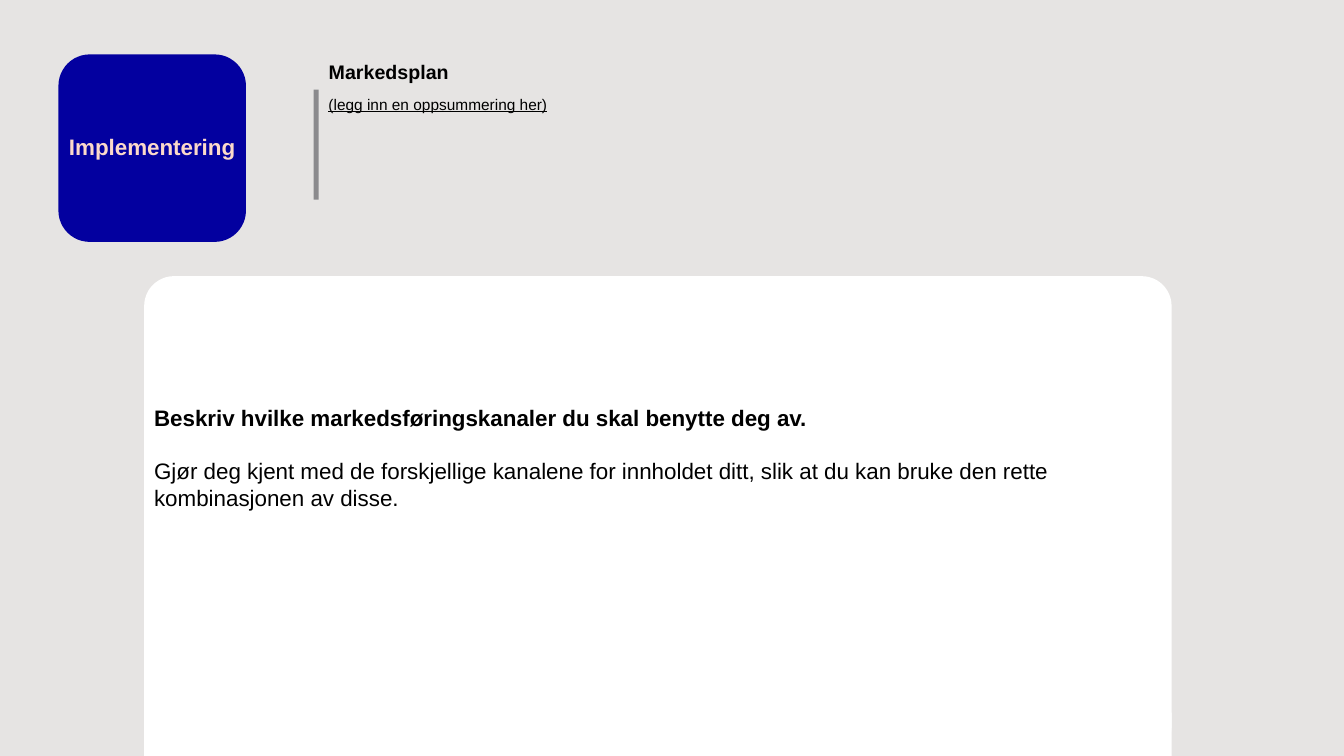
from dataclasses import dataclass, field

from pptx import Presentation
from pptx.dml.color import RGBColor
from pptx.enum import shapes, text
from pptx.shapes.autoshape import Shape
from pptx.slide import Slide
from pptx.text.text import TextFrame
from pptx.util import Inches, Pt

BACKGROUND = RGBColor(0xE6, 0xE4, 0xE3)
WHITE = RGBColor(0xFF, 0xFF, 0xFF)
BLACK = RGBColor(0x00, 0x00, 0x00)
BLUE = RGBColor(0x03, 0x00, 0x9F)
PEACH = RGBColor(0xFB, 0xD9, 0xCA)
GREY = RGBColor(0x8B, 0x8A, 0x8D)

RECTANGLE = shapes.MSO_SHAPE.RECTANGLE
ROUNDED = shapes.MSO_SHAPE.ROUNDED_RECTANGLE
TITLE_ONLY_LAYOUT = 5


@dataclass
class Box:
    left: float
    top: float
    width: float
    height: float

    def lengths(self) -> list[int]:
        return [Inches(side) for side in (self.left, self.top, self.width, self.height)]


@dataclass
class Panel:
    box: Box
    color: RGBColor
    kind: shapes.MSO_SHAPE = RECTANGLE
    rounding: float = 0


@dataclass
class Line:
    """One paragraph with its font and paragraph formats."""
    words: str
    font: dict = field(default_factory=dict)
    layout: dict = field(default_factory=dict)
    color: RGBColor = BLACK


CARD_FOOT = Panel(Box(1.43, 7.07, 10.19, 0.43), WHITE)
CARD = Panel(Box(1.43, 2.74, 10.19, 4.76), WHITE, ROUNDED, 0.062)
BADGE = Panel(Box(0.58, 0.54, 1.86, 1.86), BLUE, ROUNDED, 0.167)
BAR = Panel(Box(3.11, 0.89, 0.05, 1.09), GREY)

TITLE_BOX = Box(3.16, 0.54, 3.8, 0.34)
SUMMARY_BOX = Box(3.16, 0.89, 3.8, 0.29)
GUIDANCE_BOX = Box(1.43, 2.75, 10.19, 3.58)

BADGE_LINE = Line("Implementering", {"size": Pt(16), "bold": True},
                  {"alignment": text.PP_ALIGN.CENTER, "line_spacing": 0.9}, PEACH)
TITLE_LINE = Line("Markedsplan", {"size": Pt(14), "bold": True},
                  {"alignment": text.PP_ALIGN.LEFT})
SUMMARY_LINE = Line("(legg inn en oppsummering her)", {"size": Pt(11), "underline": True})
GUIDANCE_LINES = [
    Line("Beskriv hvilke markedsføringskanaler du skal benytte deg av.",
         {"size": Pt(16), "bold": True}),
    Line("Gjør deg kjent med de forskjellige kanalene for innholdet ditt, "
         "slik at du kan bruke den rette kombinasjonen av disse.",
         {"size": Pt(16)}, {"space_before": Pt(18.4)}),
]


def set_formats(target: object, formats: dict) -> None:
    for name, value in formats.items():
        setattr(target, name, value)


def write_lines(frame: TextFrame, lines: list[Line], **frame_formats: object) -> None:
    set_formats(frame, {"word_wrap": True, "auto_size": text.MSO_AUTO_SIZE.NONE,
                        "vertical_anchor": text.MSO_ANCHOR.TOP} | frame_formats)
    for index, line in enumerate(lines):
        paragraph = frame.add_paragraph() if index else frame.paragraphs[0]
        set_formats(paragraph, line.layout)
        run = paragraph.add_run()
        run.text = line.words
        set_formats(run.font, {"name": "Arial"} | line.font)
        run.font.color.rgb = line.color


def add_panel(slide: Slide, panel: Panel) -> Shape:
    shape = slide.shapes.add_shape(panel.kind, *panel.box.lengths())
    if panel.rounding:
        shape.adjustments[0] = panel.rounding
    shape.shadow.inherit = False
    shape.fill.solid()
    shape.fill.fore_color.rgb = panel.color
    shape.line.fill.background()
    return shape


def add_text(slide: Slide, box: Box, lines: list[Line], **frame_formats: object) -> None:
    frame = slide.shapes.add_textbox(*box.lengths()).text_frame
    write_lines(frame, lines, **frame_formats)


def place_title(slide: Slide) -> None:
    title = slide.shapes.title
    set_formats(title, dict(zip(("left", "top", "width", "height"), TITLE_BOX.lengths())))
    write_lines(title.text_frame, [TITLE_LINE])


def main() -> None:
    presentation = Presentation()
    presentation.slide_width = Inches(13.33)
    presentation.slide_height = Inches(7.5)
    slide = presentation.slides.add_slide(presentation.slide_layouts[TITLE_ONLY_LAYOUT])
    slide.background.fill.solid()
    slide.background.fill.fore_color.rgb = BACKGROUND

    middle = text.MSO_ANCHOR.MIDDLE
    place_title(slide)
    for panel in (CARD_FOOT, CARD, BAR):
        add_panel(slide, panel)
    badge = add_panel(slide, BADGE)
    write_lines(badge.text_frame, [BADGE_LINE], vertical_anchor=middle,
                margin_left=0, margin_right=0)
    add_text(slide, GUIDANCE_BOX, GUIDANCE_LINES, vertical_anchor=middle)
    add_text(slide, SUMMARY_BOX, [SUMMARY_LINE])
    presentation.save("out.pptx")


if __name__ == "__main__":
    main()
